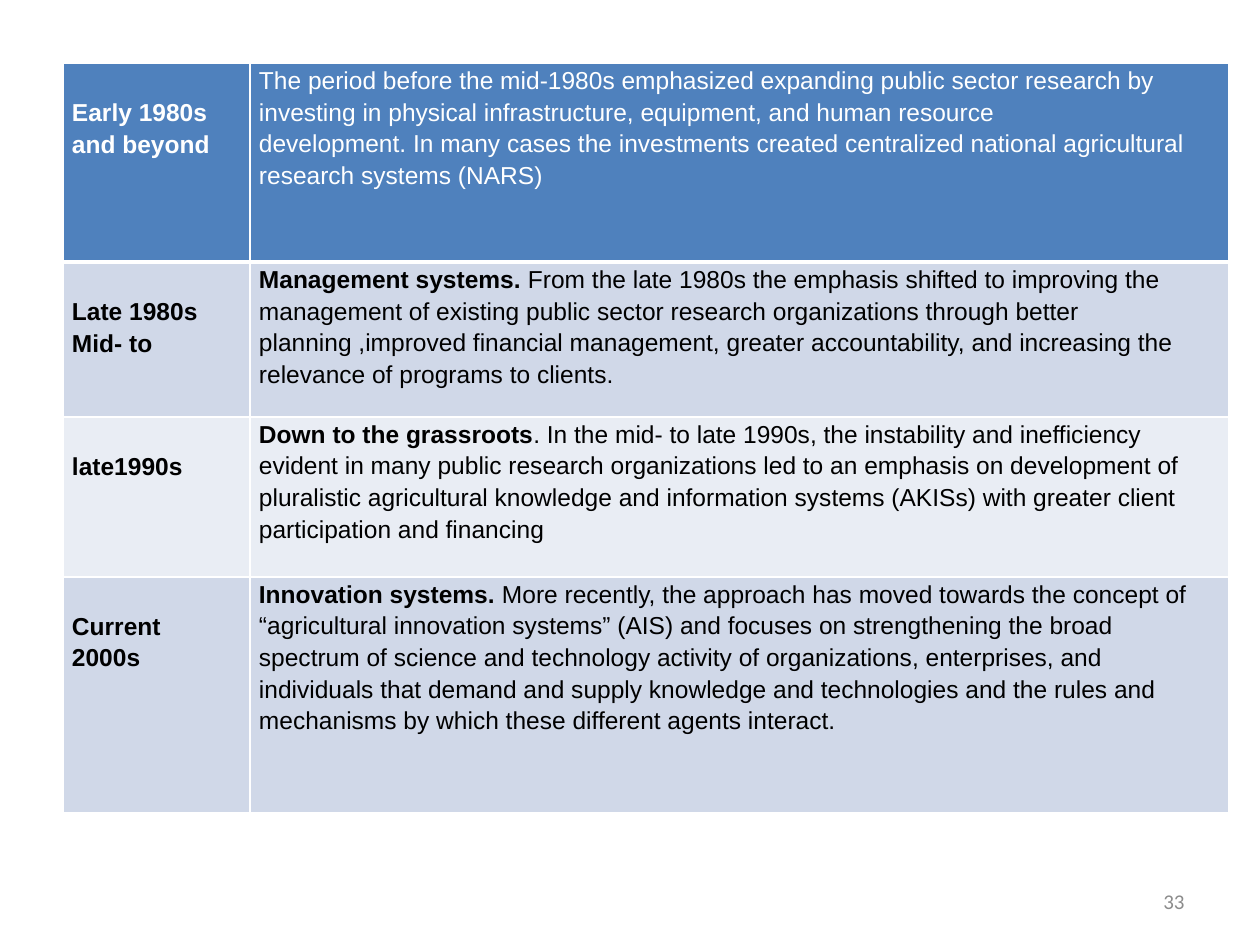
from lxml import etree
from pptx import Presentation
from pptx import util as u
from pptx.dml.color import RGBColor
from pptx.enum import text
from pptx.oxml import ns

PX_PER_INCH = 126
COLORS = {"white": "FFFFFF", "black": "000000", "grey": "8C8C8C",
          "header": "4F81BD", "odd": "D0D8E8", "even": "E9EDF4"}
COLUMN_WIDTHS = [187, 979]
ROW_HEIGHTS = [199, 155, 160, 236]
LINE_HEIGHT = 32

# Each row: period lines, then paragraphs of (bold lead, plain text).
PERIODS = [
    (["Early 1980s", "and beyond"],
     [("", "The period before the mid-1980s emphasized expanding public sector research by "
           "investing in physical infrastructure, equipment, and human resource"),
      ("", "development. In many cases the investments created centralized national agricultural"),
      ("", "research systems (NARS)")]),
    (["Late 1980s", "Mid- to"],
     [("Management systems. ",
       "From the late 1980s the emphasis shifted to improving the management of existing public "
       "sector research organizations through better planning ,improved financial management, "
       "greater accountability, and increasing the relevance of programs to clients.")]),
    (["late1990s"],
     [("Down to the grassroots",
       ". In the mid- to late 1990s, the instability and inefficiency evident in many public "
       "research organizations led to an emphasis on development of pluralistic agricultural "
       "knowledge and information systems (AKISs) with greater client participation and "
       "financing")]),
    (["Current", "2000s"],
     [("Innovation systems. ",
       "More recently, the approach has moved towards the concept of “agricultural innovation "
       "systems” (AIS) and focuses on strengthening the broad spectrum of science and technology "
       "activity of organizations, enterprises, and individuals that demand and supply knowledge "
       "and technologies and the rules and mechanisms by which these different agents interact.")]),
]


def px(length):
    return u.Emu(round(length * 914400 / PX_PER_INCH))


def rgb(name):
    return RGBColor.from_string(COLORS[name])


def set_attributes(target, values):
    for name, value in values.items():
        setattr(target, name, value)


def add_run(paragraph, words, color, size=14, bold=False, font="Arial"):
    run = paragraph.add_run()
    run.text = words
    set_attributes(run.font, {"name": font, "size": u.Pt(size), "bold": bold})
    run.font.color.rgb = rgb(color)


def add_borders(cell, bottom_width):
    """Draw white cell borders; call before setting the fill, which must follow them."""
    properties = cell._tc.get_or_add_tcPr()
    for side, width in {"L": 1, "R": 1, "T": 1, "B": bottom_width}.items():
        line = etree.SubElement(properties, ns.qn(f"a:ln{side}"), w=str(u.Pt(width)))
        fill = etree.SubElement(line, ns.qn("a:solidFill"))
        etree.SubElement(fill, ns.qn("a:srgbClr"), val=COLORS["white"])


def fill_cell(cell, paragraphs, top, fill, color, bottom_width):
    """Format a cell and write its paragraphs, each a list of (words, bold)."""
    set_attributes(cell, {"margin_left": px(9), "margin_right": px(9),
                          "margin_top": px(top), "margin_bottom": 0})
    add_borders(cell, bottom_width)
    cell.fill.solid()
    cell.fill.fore_color.rgb = rgb(fill)
    frame = cell.text_frame
    for index, runs in enumerate(paragraphs):
        paragraph = frame.add_paragraph() if index else frame.paragraphs[0]
        paragraph.line_spacing = 1.15
        for words, bold in runs:
            if words:
                add_run(paragraph, words, color, bold=bold)


def add_period_table(slide):
    table = slide.shapes.add_table(
        len(PERIODS), len(COLUMN_WIDTHS), px(63), px(63),
        px(sum(COLUMN_WIDTHS)), px(sum(ROW_HEIGHTS))).table
    for column, width in zip(table.columns, COLUMN_WIDTHS):
        column.width = px(width)
    for index, (period, description) in enumerate(PERIODS):
        table.rows[index].height = px(ROW_HEIGHTS[index])
        if index == 0:
            style = {"fill": "header", "color": "white", "bottom_width": 3}
        else:
            style = {"fill": "odd" if index % 2 else "even", "color": "black",
                     "bottom_width": 1}
        fill_cell(table.cell(index, 0), [[(line, True)] for line in period],
                  LINE_HEIGHT, **style)
        fill_cell(table.cell(index, 1),
                  [[(lead, True), (body, False)] for lead, body in description], 0, **style)


def add_page_number(slide, number):
    frame = slide.shapes.add_textbox(px(903), px(876), px(294), px(50)).text_frame
    set_attributes(frame, {"word_wrap": True, "vertical_anchor": text.MSO_ANCHOR.MIDDLE})
    paragraph = frame.paragraphs[0]
    paragraph.alignment = text.PP_ALIGN.RIGHT
    add_run(paragraph, number, "grey", size=12, font="Calibri")


def main():
    presentation = Presentation()
    set_attributes(presentation, {"slide_width": px(1260), "slide_height": px(945)})
    slide = presentation.slides.add_slide(presentation.slide_layouts[6])
    add_page_number(slide, "33")
    add_period_table(slide)
    presentation.save("out.pptx")


if __name__ == "__main__":
    main()
